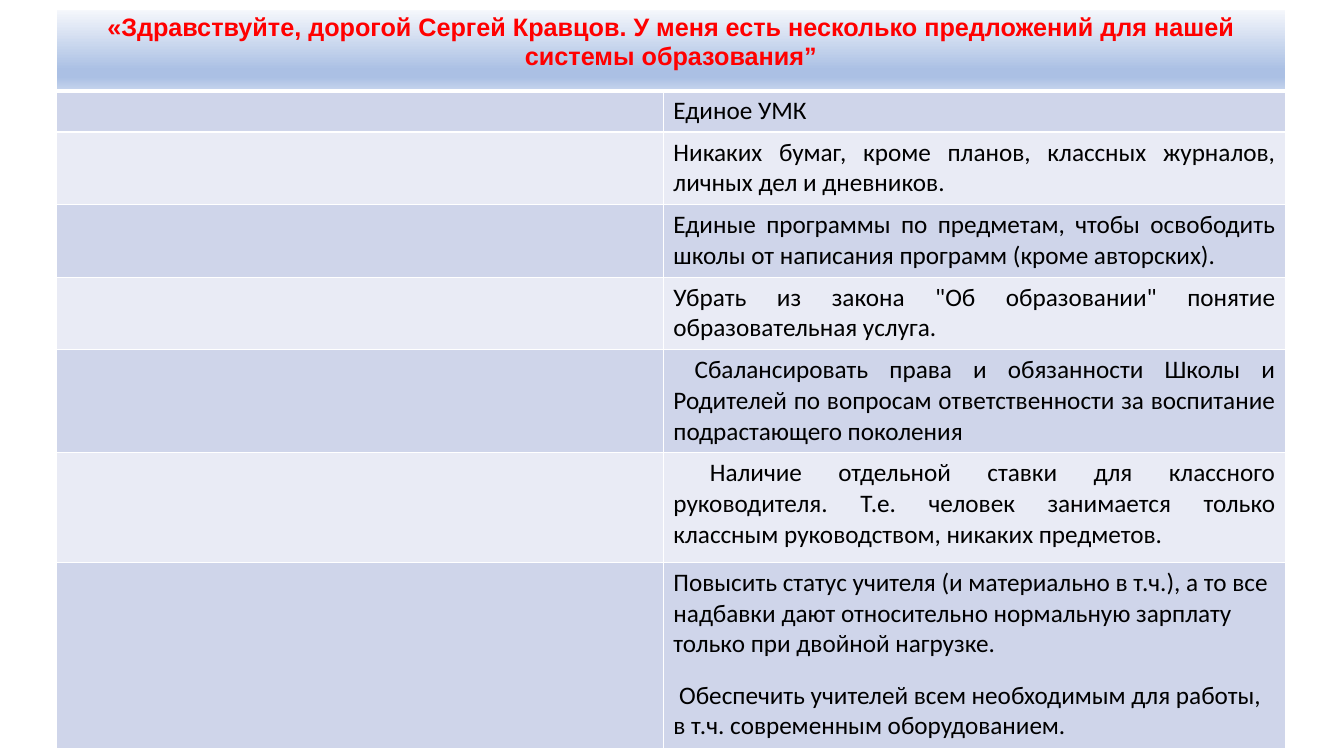
from lxml import etree
from pptx import Presentation
from pptx.dml.color import RGBColor
from pptx.enum.text import PP_ALIGN
from pptx.oxml.ns import qn
from pptx.util import Inches, Pt

CENTER, JUSTIFY, LEFT = PP_ALIGN.CENTER, PP_ALIGN.JUSTIFY, PP_ALIGN.LEFT

THEME = {
    "title_font": "Arial",
    "body_font": "Calibri",
    "size": 18,
    "title": "FF0000",
    "body": "000000",
    "border": "FFFFFF",
    "bands": ["CFD5EA", "E9EBF5"],
    "gradient": [(0, "F6F8FC"), (74, "ABC0E4"), (83, "ABC0E4"), (100, "C7D5ED")],
}

TITLE = "«Здравствуйте, дорогой Сергей Кравцов. У меня есть несколько предложений для нашей системы образования”"
PROPOSALS = [
    (0.41, JUSTIFY, ["Единое УМК"]),
    (0.72, JUSTIFY, ["Никаких бумаг, кроме планов, классных журналов, личных дел и дневников."]),
    (0.72, JUSTIFY, ["Единые программы по предметам, чтобы освободить школы от написания программ (кроме авторских)."]),
    (0.72, JUSTIFY, ["Убрать из закона \"Об образовании\" понятие образовательная услуга."]),
    (1.02, JUSTIFY, [" Сбалансировать права и обязанности Школы и Родителей по вопросам ответственности за воспитание подрастающего поколения"]),
    (1.09, JUSTIFY, [" Наличие отдельной ставки для классного руководителя. Т.е. человек занимается только классным руководством, никаких предметов."]),
    (1.85, LEFT, [
        "Повысить статус учителя (и материально в т.ч.), а то все надбавки дают относительно нормальную зарплату только при двойной нагрузке.",
        " Обеспечить учителей всем необходимым для работы, в т.ч. современным оборудованием.",
    ]),
]
COLUMN_WIDTHS = [6.02, 6.17]
ROW_HEIGHTS = [0.81] + [height for height, _, _ in PROPOSALS]


def write(cell, texts, align, font, color, bold):
    for index, text in enumerate(texts):
        frame = cell.text_frame
        paragraph = frame.add_paragraph() if index else frame.paragraphs[0]
        paragraph.alignment = align
        if index:
            paragraph.space_before = Pt(14.6)
        run = paragraph.add_run()
        run.text = text
        run.font.name = font
        run.font.size = Pt(THEME["size"])
        run.font.bold = bold
        run.font.color.rgb = RGBColor.from_string(color)


def add_borders(cell, bottom, top):
    properties = cell._tc.get_or_add_tcPr()
    for side, width in (("lnL", 1), ("lnR", 1), ("lnT", top), ("lnB", bottom)):
        line = etree.SubElement(properties, qn("a:" + side), w=str(Pt(width)))
        fill = etree.SubElement(line, qn("a:solidFill"))
        etree.SubElement(fill, qn("a:srgbClr"), val=THEME["border"])


deck = Presentation()
deck.slide_width, deck.slide_height = Inches(13.33), Inches(7.5)
slide = deck.slides.add_slide(deck.slide_layouts[6])

proposals_table = slide.shapes.add_table(
    len(ROW_HEIGHTS), len(COLUMN_WIDTHS), Inches(0.56), Inches(0.09),
    Inches(sum(COLUMN_WIDTHS)), Inches(sum(ROW_HEIGHTS))).table
for column, width in zip(proposals_table.columns, COLUMN_WIDTHS):
    column.width = Inches(width)
for row, height in zip(proposals_table.rows, ROW_HEIGHTS):
    row.height = Inches(height)

header = proposals_table.cell(0, 0)
header.merge(proposals_table.cell(0, 1))
write(header, [TITLE], CENTER, THEME["title_font"], THEME["title"], True)
for column in range(len(COLUMN_WIDTHS)):
    add_borders(proposals_table.cell(0, column), 3, 1)
header.fill.gradient()
header.fill.gradient_angle = 270
stops = header._tc.tcPr.find(qn("a:gradFill")).find(qn("a:gsLst"))
for stop in list(stops):
    stops.remove(stop)
for position, color in THEME["gradient"]:
    stop = etree.SubElement(stops, qn("a:gs"), pos=str(position * 1000))
    etree.SubElement(stop, qn("a:srgbClr"), val=color)

for row, (_, align, texts) in enumerate(PROPOSALS, start=1):
    for column in range(len(COLUMN_WIDTHS)):
        cell = proposals_table.cell(row, column)
        add_borders(cell, 1, 3 if row == 1 else 1)
        cell.fill.solid()
        cell.fill.fore_color.rgb = RGBColor.from_string(THEME["bands"][(row - 1) % 2])
    write(proposals_table.cell(row, 1), texts, align, THEME["body_font"], THEME["body"], False)

deck.save("out.pptx")
